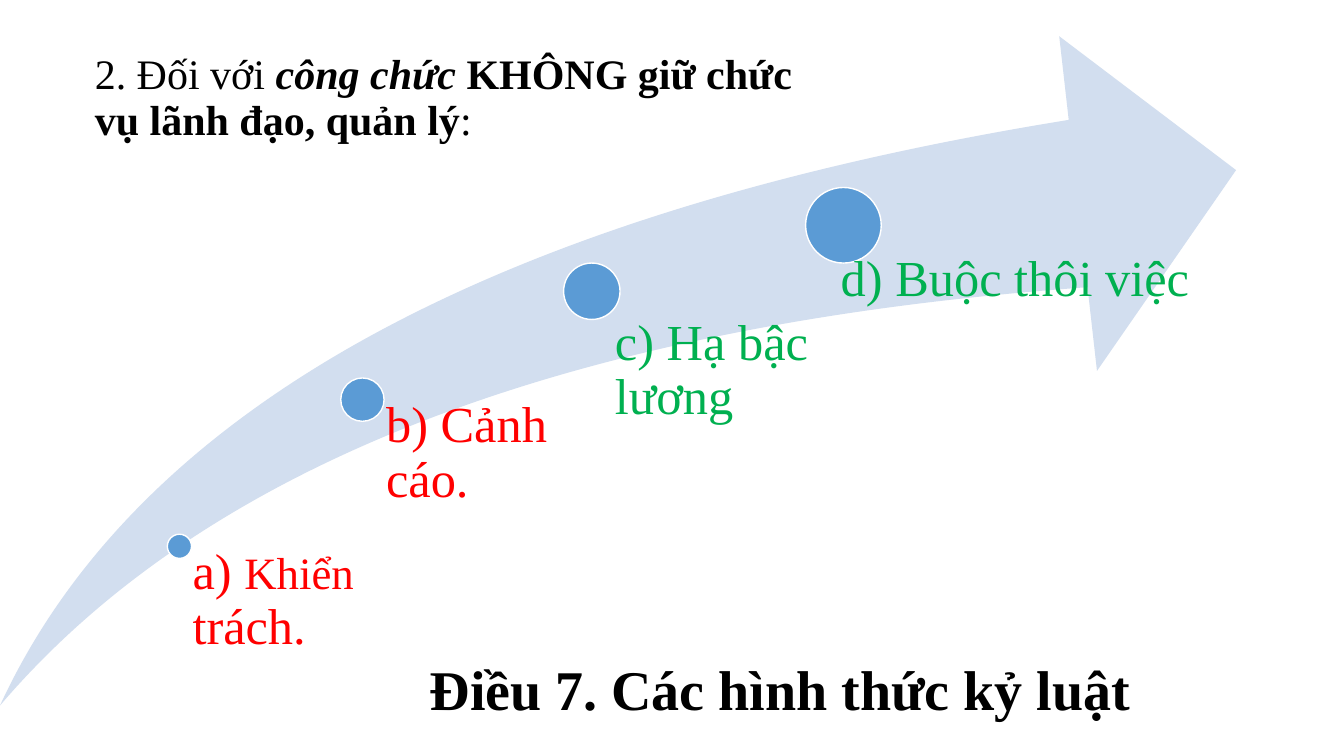
from dataclasses import dataclass

from pptx import Presentation
from pptx.dml.color import RGBColor
from pptx.enum.shapes import MSO_SHAPE
from pptx.enum.text import MSO_ANCHOR, MSO_AUTO_SIZE, PP_ALIGN
from pptx.util import Inches, Pt

SWOOSH, OVAL = MSO_SHAPE.SWOOSH_ARROW, MSO_SHAPE.OVAL
TOP = MSO_ANCHOR.TOP
NO_FIT, GROW = MSO_AUTO_SIZE.NONE, MSO_AUTO_SIZE.SHAPE_TO_FIT_TEXT
LEFT, CENTER = PP_ALIGN.LEFT, PP_ALIGN.CENTER

FONT = "Times New Roman"
BLACK, RED, GREEN = "000000", "FF0000", "00B050"
PALE_BLUE, BLUE, WHITE = "D2DEEF", "5B9BD5", "FFFFFF"

Box = tuple[float, float, float, float]


@dataclass
class Run:
    text: str
    size: float
    bold: bool = False
    italic: bool = False


@dataclass
class Label:
    box: Box
    runs: list[Run]
    color: str
    insets: Box = (0, 0, 0, 0)
    spacing: float = 0.9
    align: PP_ALIGN = LEFT
    wrap: bool = True
    fit: MSO_AUTO_SIZE = NO_FIT


@dataclass
class Dot:
    left: float
    top: float
    size: float


DOTS = [
    Dot(1.66, 5.3, 0.24),
    Dot(3.38, 3.75, 0.43),
    Dot(5.59, 2.61, 0.56),
    Dot(7.99, 1.86, 0.75),
]

LABELS = [
    Label((1.78, 5.42, 1.82, 1.58),
          [Run("a) ", 36), Run("Khiển", 32), Run(" trách.", 36)],
          RED, (0.13, 0, 0, 0)),
    Label((3.6, 3.96, 2.23, 3.04), [Run("b) Cảnh cáo.", 36)],
          RED, (0.23, 0, 0, 0)),
    Label((5.8, 3.14, 3.2, 0.8), [Run("c) Hạ bậc lương", 36)],
          GREEN, (0.3, 0, 0, 0)),
    Label((0.54, 0.53, 7.39, 0.91),
          [Run("2. Đối với ", 30),
           Run("công chức ", 30, bold=True, italic=True),
           Run("KHÔNG giữ chức vụ lãnh đạo, quản lý", 30, bold=True),
           Run(":", 30)],
          BLACK, (0.4, 0, 0, 0)),
    Label((8.24, 2.39, 3.69, 0.71), [Run("d) Buộc thôi việc", 36)],
          GREEN, (0.1, 0.05, 0.1, 0.05), spacing=1.0, wrap=False, fit=GROW),
    Label((3.8, 6.36, 7.87, 0.77),
          [Run("Điều 7. Các hình thức kỷ luật", 40, bold=True)],
          BLACK, (0.1, 0.13, 0.1, 0.05), spacing=1.0, align=CENTER, fit=GROW),
]


def rgb(value: str) -> RGBColor:
    return RGBColor.from_string(value)


def set_all(target, values: dict) -> None:
    for name, value in values.items():
        setattr(target, name, value)


def add_filled(s, kind: MSO_SHAPE, box: Box, fill: str, line: str | None = None):
    sp = s.shapes.add_shape(kind, *map(Inches, box))
    sp.shadow.inherit = False
    sp.fill.solid()
    sp.fill.fore_color.rgb = rgb(fill)
    if line:
        sp.line.color.rgb = rgb(line)
        sp.line.width = Pt(1)
    else:
        sp.line.fill.background()
    return sp


def add_label(s, label: Label) -> None:
    tf = s.shapes.add_textbox(*map(Inches, label.box)).text_frame
    left, top, right, bottom = map(Inches, label.insets)
    set_all(tf, {
        "margin_left": left, "margin_top": top,
        "margin_right": right, "margin_bottom": bottom,
        "word_wrap": label.wrap, "auto_size": label.fit,
        "vertical_anchor": TOP,
    })
    p = tf.paragraphs[0]
    set_all(p, {"alignment": label.align, "line_spacing": label.spacing})
    for run in label.runs:
        r = p.add_run()
        r.text = run.text
        set_all(r.font, {"name": FONT, "size": Pt(run.size),
                         "bold": run.bold, "italic": run.italic})
        r.font.color.rgb = rgb(label.color)


def main() -> None:
    prs = Presentation()
    prs.slide_width, prs.slide_height = Inches(13.33), Inches(7.5)
    s = prs.slides.add_slide(prs.slide_layouts[6])

    arrow = add_filled(s, SWOOSH, (0, 0.36, 12.26, 6.64), PALE_BLUE)
    arrow.adjustments[0] = arrow.adjustments[1] = 0.25
    for dot in DOTS:
        add_filled(s, OVAL, (dot.left, dot.top, dot.size, dot.size), BLUE, WHITE)
    for label in LABELS:
        add_label(s, label)

    prs.save("out.pptx")


if __name__ == "__main__":
    main()
